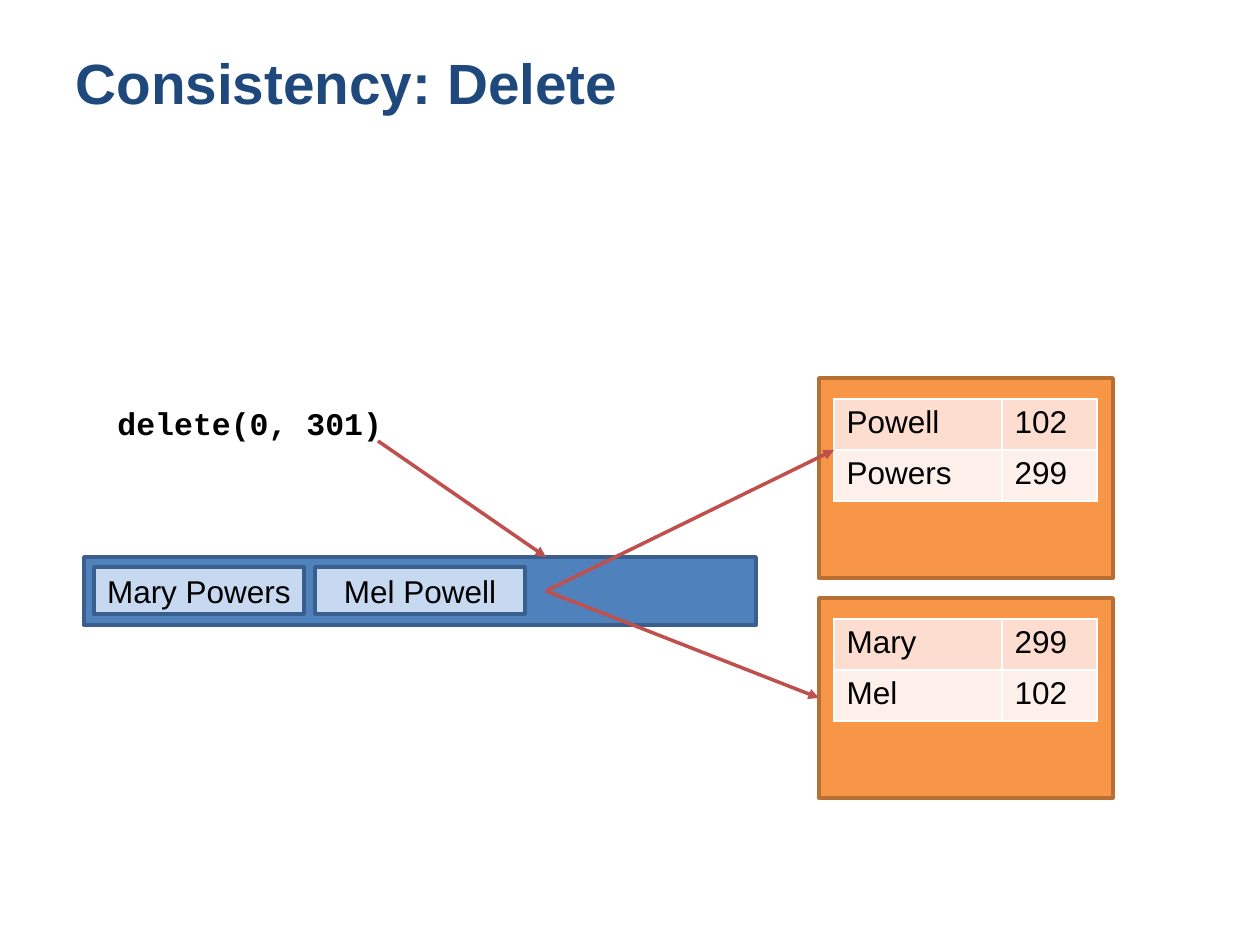
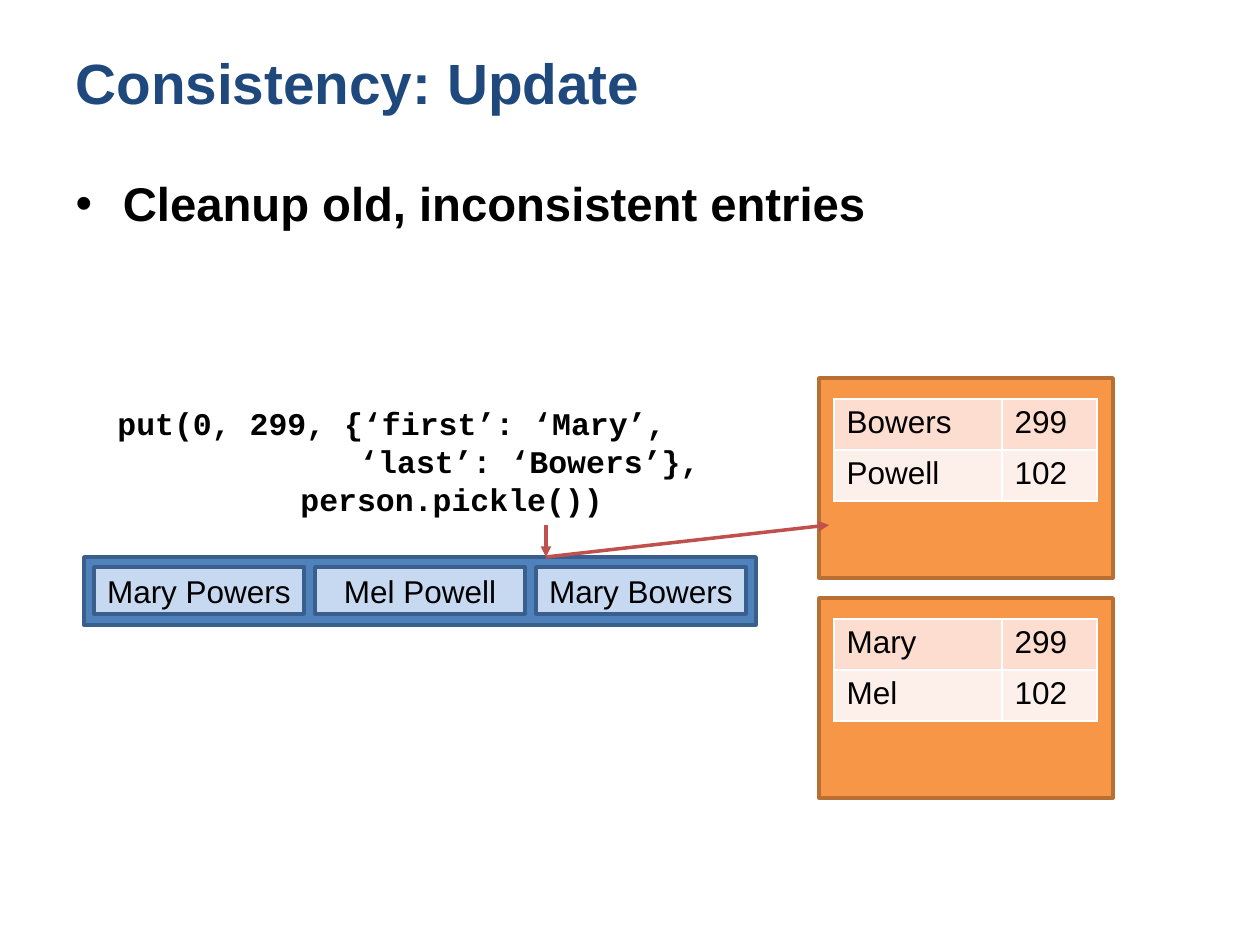
from lxml import etree
from pptx import Presentation
from pptx.dml.color import RGBColor
from pptx.enum.shapes import MSO_CONNECTOR, MSO_SHAPE
from pptx.enum.text import MSO_ANCHOR, MSO_AUTO_SIZE, PP_ALIGN
from pptx.oxml.ns import qn
from pptx.util import Emu, Pt

RECT = MSO_SHAPE.RECTANGLE
LINE = MSO_CONNECTOR.STRAIGHT
MID, TOP = MSO_ANCHOR.MIDDLE, MSO_ANCHOR.TOP
LEFT, CENTER = PP_ALIGN.LEFT, PP_ALIGN.CENTER
NO_FIT = MSO_AUTO_SIZE.NONE

BLACK, WHITE, NAVY, RED = "000000", "FFFFFF", "1F497D", "C0504D"
BLUE, PALE, EDGE = "4F81BD", "C6D9F1", "3A5F8C"
ORANGE, RUST = "F79646", "B76F34"
BANDS = ("FCDDCF", "FDEFE9")
SANS, MONO = "Arial", "Courier New"
TITLE_ONLY, TITLE_BODY = 5, 1

PANEL_X, PANEL_W, PANEL_H = 819, 294, 200
PANEL_TOPS = (378, 598)
COLS, ROW_H = (168, 95), 51
BAR = (84, 557, 672, 68)
BOX_W, BOX_H, BOX_GAP, BAR_PAD = 210, 47, 11, 10
ENTRY = (546, 557)  # where a call meets the bar


def px(n):
    """Turn pixels, 126 to the inch, into EMU."""
    return Emu(round(n * 914400 / 126))


def color(code):
    return RGBColor.from_string(code)


class Deck:
    def __init__(self):
        self.prs = Presentation()
        self.prs.slide_width, self.prs.slide_height = px(1260), px(945)
        self.slide = None

    def start(self, title, layout=TITLE_ONLY):
        """Add a slide and make it the current one."""
        self.slide = self.prs.slides.add_slide(self.prs.slide_layouts[layout])
        self.fill_in(0, title, (63, 38, 1134, 88), 32.4, NAVY, MID)

    def fill_in(self, idx, text, box, size, ink, anchor):
        """Place and format a template placeholder."""
        holder = self.slide.placeholders[idx]
        holder.left, holder.top, holder.width, holder.height = map(px, box)
        frame = holder.text_frame
        frame.text = text
        frame.auto_size, frame.vertical_anchor = NO_FIT, anchor
        self.style(frame.paragraphs[0], size, ink, bold=True, align=LEFT)

    def style(self, para, size=18, ink=BLACK, face=SANS, bold=False, align=LEFT):
        para.alignment = align
        font = para.font
        font.name, font.size, font.bold = face, Pt(size), bold
        font.color.rgb = color(ink)

    def rect(self, box, fill, edge, text=""):
        shape = self.slide.shapes.add_shape(RECT, *map(px, box))
        shape.shadow.inherit = False
        shape.fill.solid()
        shape.fill.fore_color.rgb = color(fill)
        shape.line.color.rgb = color(edge)
        shape.line.width = Pt(2)
        if text:
            frame = shape.text_frame
            frame.margin_left = frame.margin_right = 0
            frame.text, frame.vertical_anchor = text, MID
            self.style(frame.paragraphs[0], align=CENTER)

    def bar(self, names):
        """Draw the record bar with its boxes, left to right."""
        self.rect(BAR, BLUE, EDGE)
        for i, name in enumerate(names):
            left = BAR[0] + BAR_PAD + i * (BOX_W + BOX_GAP)
            self.rect((left, BAR[1] + BAR_PAD, BOX_W, BOX_H), PALE, EDGE, name)

    def code(self, box, lines):
        """Write code given as (indent, text) pairs."""
        frame = self.slide.shapes.add_textbox(*map(px, box)).text_frame
        frame.word_wrap = True
        for i, (indent, text) in enumerate(lines):
            para = frame.add_paragraph() if i else frame.paragraphs[0]
            para.text = text
            self.style(para, face=MONO, bold=True)
            para._p.get_or_add_pPr().set("marL", str(px(indent)))

    def table(self, left, top, rows):
        frame = self.slide.shapes.add_table(
            len(rows), len(COLS), px(left), px(top), px(sum(COLS)), px(ROW_H * len(rows)))
        grid = frame.table
        grid.first_row = grid.horz_banding = False
        for col, width in zip(grid.columns, COLS):
            col.width = px(width)
        for r, row in enumerate(rows):
            grid.rows[r].height = px(ROW_H)
            for c, text in enumerate(row):
                cell = grid.cell(r, c)
                cell.text = text
                self.style(cell.text_frame.paragraphs[0])
                self.border(cell)
                cell.fill.solid()
                cell.fill.fore_color.rgb = color(BANDS[r % 2])

    def border(self, cell):
        props = cell._tc.get_or_add_tcPr()
        for side in ("lnL", "lnR", "lnT", "lnB"):
            line = etree.SubElement(props, qn("a:" + side), w=str(Pt(1)))
            fill = etree.SubElement(line, qn("a:solidFill"))
            etree.SubElement(fill, qn("a:srgbClr"), val=WHITE)

    def panels(self, tables):
        """Draw the two index panels, each holding a table."""
        for top, rows in zip(PANEL_TOPS, tables):
            self.rect((PANEL_X, top, PANEL_W, PANEL_H), ORANGE, RUST)
            self.table(PANEL_X + 15, top + 21, rows)

    def arrow(self, start, end):
        link = self.slide.shapes.add_connector(LINE, *map(px, start + end))
        link.line.color.rgb = color(RED)
        link.line.width = Pt(2)
        etree.SubElement(link.line._get_or_add_ln(), qn("a:tailEnd"), type="triangle")
        etree.SubElement(link._element.spPr, qn("a:effectLst"))


def main():
    deck = Deck()
    people = ["Mary Powers", "Mel Powell"]
    firsts = [("Mary", "299"), ("Mel", "102")]

    deck.start("Consistency: Delete")
    deck.panels([[("Powell", "102"), ("Powers", "299")], firsts])
    deck.code((105, 398, 1050, 51), [(0, "delete(0, 301)")])
    deck.bar(people)
    deck.arrow((378, 441), ENTRY)
    for end in ((834, 450), (819, 698)):
        deck.arrow((546, 591), end)

    deck.start("Consistency: Update", TITLE_BODY)
    deck.fill_in(1, "Cleanup old, inconsistent entries", (63, 168, 1134, 677), 27, BLACK, TOP)
    deck.panels([[("Bowers", "299"), ("Powell", "102")], firsts])
    deck.code((105, 398, 640, 127), [
        (0, "put(0, 299, {‘first’: ‘Mary’,"),
        (242, "‘last’: ‘Bowers’},"),
        (183, "person.pickle())"),
    ])
    deck.bar(people + ["Mary Bowers"])
    deck.arrow((546, 525), ENTRY)
    deck.arrow(ENTRY, (829, 525))

    deck.prs.save("out.pptx")


if __name__ == "__main__":
    main()
